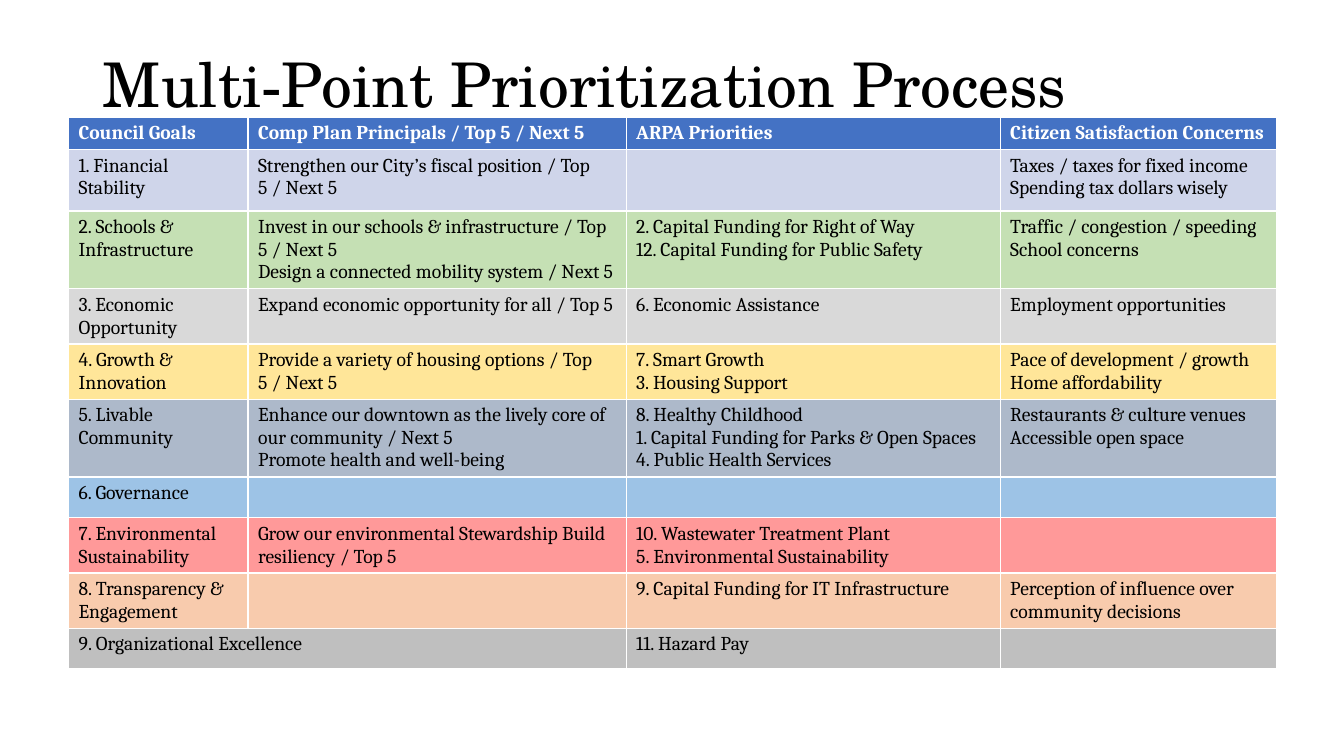
from dataclasses import dataclass

from pptx import Presentation
from pptx.dml.color import RGBColor
from pptx.enum.text import MSO_ANCHOR, MSO_AUTO_SIZE, PP_ALIGN
from pptx.slide import Slide
from pptx.table import Table
from pptx.text.text import TextFrame
from pptx.util import Emu, Pt

EMU_PER_PX = 9144  # 100 px to the inch

COLOURS = {
    "black": "000000", "white": "FFFFFF", "header": "4472C4",
    "lavender": "CFD5EA", "green": "C5E0B4", "silver": "D9D9D9",
    "yellow": "FFE699", "slate": "ADB9CA", "blue": "9DC3E6",
    "red": "FF9999", "orange": "F8CBAD", "grey": "BFBFBF",
}


@dataclass(frozen=True)
class GoalRow:
    height: int
    fill: str
    goal: str
    principals: str = ""
    arpa: str = ""
    concerns: str = ""
    ink: str = "black"
    bold: bool = False


COLUMN_WIDTHS = (178, 375, 371, 274)
GOAL_ROWS = (
    GoalRow(31, "header", "Council Goals", "Comp Plan Principals / Top 5 / Next 5",
            "ARPA Priorities", "Citizen Satisfaction Concerns", "white", True),
    GoalRow(61, "lavender", "1. Financial Stability",
            "Strengthen our City’s fiscal position / Top 5 / Next 5", "",
            "Taxes / taxes for fixed income\nSpending tax dollars wisely"),
    GoalRow(77, "green", "2. Schools & Infrastructure",
            "Invest in our schools & infrastructure / Top 5 / Next 5\n"
            "Design a connected mobility system / Next 5",
            "2. Capital Funding for Right of Way\n12. Capital Funding for Public Safety",
            "Traffic / congestion / speeding\nSchool concerns"),
    GoalRow(54, "silver", "3. Economic Opportunity",
            "Expand economic opportunity for all / Top 5",
            "6. Economic Assistance", "Employment opportunities"),
    GoalRow(54, "yellow", "4. Growth & Innovation",
            "Provide a variety of housing options / Top 5 / Next 5",
            "7. Smart Growth\n3. Housing Support",
            "Pace of development / growth\nHome affordability"),
    GoalRow(77, "slate", "5. Livable Community",
            "Enhance our downtown as the lively core of our community / Next 5\n"
            "Promote health and well-being",
            "8. Healthy Childhood\n1. Capital Funding for Parks & Open Spaces\n"
            "4. Public Health Services",
            "Restaurants & culture venues\nAccessible open space"),
    GoalRow(33, "blue", "6. Governance"),
    GoalRow(54, "red", "7. Environmental Sustainability",
            "Grow our environmental Stewardship Build resiliency / Top 5",
            "10. Wastewater Treatment Plant\n5. Environmental Sustainability"),
    GoalRow(54, "orange", "8. Transparency & Engagement", "",
            "9. Capital Funding for IT Infrastructure",
            "Perception of influence over community decisions"),
    GoalRow(33, "grey", "9. Organizational Excellence", "", "11. Hazard Pay"),
)


def px(length: int) -> Emu:
    return Emu(length * EMU_PER_PX)


def colour(name: str) -> RGBColor:
    return RGBColor.from_string(COLOURS[name])


def format_runs(frame: TextFrame, font: str, size: int, ink: str, bold: bool = False) -> None:
    for paragraph in frame.paragraphs:
        for run in paragraph.runs:
            run.font.name = font
            run.font.size = Pt(size)
            run.font.bold = bold
            run.font.color.rgb = colour(ink)


def add_heading(slide: Slide) -> None:
    heading = slide.shapes.title
    heading.left, heading.top = px(92), px(40)
    heading.width, heading.height = px(1150), px(93)
    frame = heading.text_frame
    frame.text = "Multi-Point Prioritization Process"
    frame.auto_size = MSO_AUTO_SIZE.NONE
    frame.vertical_anchor = MSO_ANCHOR.MIDDLE
    frame.paragraphs[0].alignment = PP_ALIGN.LEFT
    frame.paragraphs[0].line_spacing = 0.9
    format_runs(frame, "TeX Gyre Schola", 44, "black")


def fill_row(priorities: Table, index: int, row: GoalRow) -> None:
    priorities.rows[index].height = px(row.height)
    entries = (row.goal, row.principals, row.arpa, row.concerns)
    for column, entry in enumerate(entries):
        cell = priorities.cell(index, column)
        cell.fill.solid()
        cell.fill.fore_color.rgb = colour(row.fill)
        if entry:
            cell.text_frame.text = entry
            format_runs(cell.text_frame, "Cambria", 14, row.ink, row.bold)


def add_priorities(slide: Slide) -> None:
    priorities = slide.shapes.add_table(
        len(GOAL_ROWS), len(COLUMN_WIDTHS), px(68), px(116),
        px(sum(COLUMN_WIDTHS)), px(sum(row.height for row in GOAL_ROWS))).table
    for column, width in zip(priorities.columns, COLUMN_WIDTHS):
        column.width = px(width)
    for index, row in enumerate(GOAL_ROWS):
        fill_row(priorities, index, row)
    # The last goal spans the principals column
    last = len(GOAL_ROWS) - 1
    priorities.cell(last, 0).merge(priorities.cell(last, 1))


def main() -> None:
    deck = Presentation()
    deck.slide_width, deck.slide_height = px(1333), px(750)
    slide = deck.slides.add_slide(deck.slide_layouts.get_by_name("Title Only"))
    add_heading(slide)
    add_priorities(slide)
    deck.save("out.pptx")


if __name__ == "__main__":
    main()
